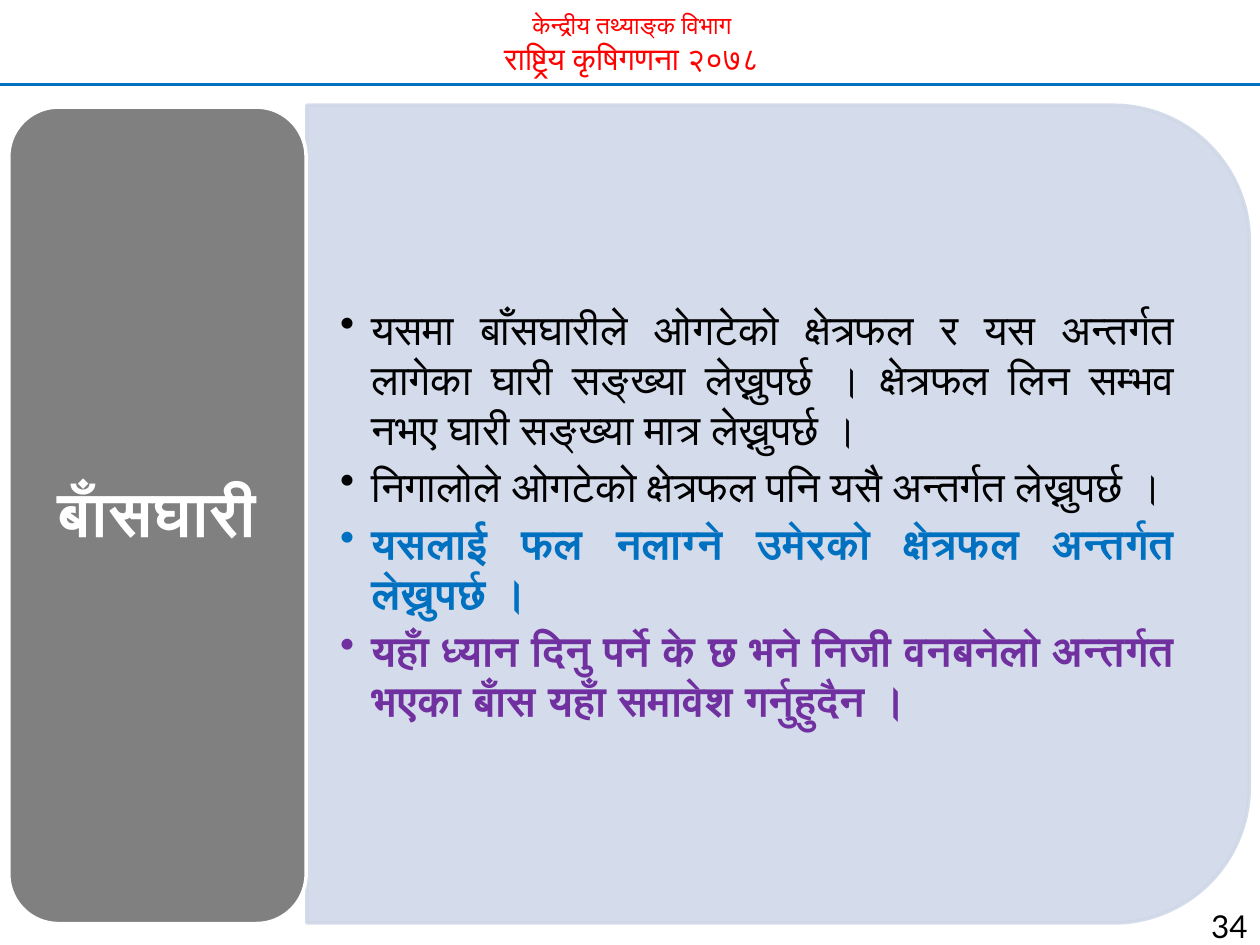
"""Build the bamboo-grove slide of the agriculture census training deck."""
from dataclasses import dataclass

from lxml import etree
from pptx import Presentation
from pptx.dml.color import RGBColor
from pptx.enum.shapes import MSO_CONNECTOR, MSO_SHAPE
from pptx.enum.text import MSO_ANCHOR, PP_ALIGN
from pptx.oxml.ns import qn
from pptx.util import Inches, Pt

STRAIGHT = MSO_CONNECTOR.STRAIGHT
ROUNDED = MSO_SHAPE.ROUNDED_RECTANGLE
ROUNDED_TOP = MSO_SHAPE.ROUND_2_SAME_RECTANGLE
TOP, MIDDLE = MSO_ANCHOR.TOP, MSO_ANCHOR.MIDDLE
CENTER, RIGHT, JUSTIFY = PP_ALIGN.CENTER, PP_ALIGN.RIGHT, PP_ALIGN.JUSTIFY

RED = RGBColor(0xFF, 0x00, 0x00)
BLUE = RGBColor(0x00, 0x70, 0xC0)
PURPLE = RGBColor(0x70, 0x30, 0xA0)
PALE_BLUE = RGBColor(0xD0, 0xD8, 0xE8)
GRAY = RGBColor(0x80, 0x80, 0x80)
WHITE = RGBColor(0xFF, 0xFF, 0xFF)
BLACK = RGBColor(0x00, 0x00, 0x00)


@dataclass(frozen=True)
class Line:
    """One paragraph and its character format."""

    text: str
    size: float
    color: RGBColor
    bold: bool = False


@dataclass(frozen=True)
class Box:
    """A rectangle in inches."""

    left: float
    top: float
    width: float
    height: float

    def lengths(self) -> tuple:
        """Return the four sides as slide lengths."""
        return tuple(Inches(v) for v in (self.left, self.top, self.width, self.height))


HEADING = [
    Line("केन्द्रीय तथ्याङ्क विभाग", 14, RED),
    Line("राष्ट्रिय कृषिगणना २०७८", 18, RED),
]
TOPIC = [Line("बाँसघारी", 36, WHITE, True)]
GUIDELINES = [
    Line("यसमा बाँसघारीले ओगटेको क्षेत्रफल र यस अन्तर्गत लागेका घारी सङ्ख्या लेख्नुपर्छ । "
         "क्षेत्रफल लिन सम्भव नभए घारी सङ्ख्या मात्र लेख्नुपर्छ ।", 24, BLACK),
    Line("निगालोले ओगटेको क्षेत्रफल पनि यसै अन्तर्गत लेख्नुपर्छ ।", 24, BLACK),
    Line("यसलाई फल नलाग्ने उमेरको क्षेत्रफल अन्तर्गत लेख्नुपर्छ ।", 24, BLUE, True),
    Line("यहाँ ध्यान दिनु पर्ने के छ भने निजी वनबनेलो अन्तर्गत भएका बाँस यहाँ समावेश गर्नुहुदैन ।",
         24, PURPLE, True),
]
PAGE_NUMBER = [Line("34", 18, BLACK)]


def add_bullet(paragraph) -> None:
    """Give a paragraph a round bullet with a hanging indent."""
    properties = paragraph._p.get_or_add_pPr()
    properties.set("marL", str(Inches(0.25)))
    properties.set("indent", str(-Inches(0.25)))
    etree.SubElement(properties, qn("a:buChar")).set("char", "•")


def add_text(slide, box: Box, lines: list[Line], *, font: str, align, anchor=TOP,
             inset: tuple = (0.1, 0.05), spacing: float = 1.0,
             after: float = 0, bullets: bool = False) -> None:
    """Add a wrapped text box holding one paragraph per line."""
    frame = slide.shapes.add_textbox(*box.lengths()).text_frame
    frame.word_wrap = True
    frame.vertical_anchor = anchor
    frame.margin_left = frame.margin_right = Inches(inset[0])
    frame.margin_top = frame.margin_bottom = Inches(inset[1])
    for index, line in enumerate(lines):
        paragraph = frame.add_paragraph() if index else frame.paragraphs[0]
        if bullets:
            add_bullet(paragraph)
        paragraph.alignment = align
        paragraph.line_spacing = spacing
        paragraph.space_after = Pt(after)
        run = paragraph.add_run()
        run.text = line.text
        run.font.name = font
        run.font.size = Pt(line.size)
        run.font.bold = line.bold
        run.font.color.rgb = line.color


def add_panel(slide, kind, box: Box, fill: RGBColor, outline: RGBColor, *,
              rotation: float = 0, opacity: int = 100) -> None:
    """Add a filled and outlined shape."""
    panel = slide.shapes.add_shape(kind, *box.lengths())
    panel.shadow.inherit = False
    panel.rotation = rotation
    panel.fill.solid()
    panel.fill.fore_color.rgb = fill
    panel.line.color.rgb = outline
    panel.line.width = Pt(2)
    if opacity < 100:
        for color in panel._element.spPr.iter(qn("a:srgbClr")):
            etree.SubElement(color, qn("a:alpha")).set("val", str(opacity * 1000))


def add_rule(slide, top: float, width: float, color: RGBColor) -> None:
    """Add a horizontal line from the left edge."""
    rule = slide.shapes.add_connector(STRAIGHT, 0, Inches(top), Inches(width), Inches(top))
    rule.line.color.rgb = color
    rule.line.width = Pt(1.5)
    etree.SubElement(rule._element.spPr, qn("a:effectLst"))


def main() -> None:
    """Create and save the presentation."""
    deck = Presentation()
    deck.slide_width, deck.slide_height = Inches(10), Inches(7.5)
    slide = deck.slides.add_slide(deck.slide_layouts[6])

    add_text(slide, Box(0.7, 0.03, 8.63, 0.64), HEADING, font="Calibri", align=CENTER)
    add_rule(slide, 0.67, 10.02, BLUE)
    add_panel(slide, ROUNDED_TOP, Box(2.93, 0.34, 6.49, 7.48), PALE_BLUE, PALE_BLUE,
              rotation=90, opacity=90)
    add_text(slide, Box(2.43, 1.15, 7.16, 5.86), GUIDELINES, font="Roboto", align=JUSTIFY,
             anchor=MIDDLE, inset=(0.27, 0.14), after=3.6, bullets=True)
    add_panel(slide, ROUNDED, Box(0.07, 0.85, 2.36, 6.48), GRAY, WHITE)
    add_text(slide, Box(0.18, 0.97, 2.13, 6.25), TOPIC, font="Roboto", align=CENTER,
             anchor=MIDDLE, inset=(0.15, 0.07), spacing=0.9, after=12.6)
    add_text(slide, Box(9.23, 7, 0.77, 0.42), PAGE_NUMBER, font="Lato", align=RIGHT,
             spacing=1.5)

    deck.save("out.pptx")


if __name__ == "__main__":
    main()
